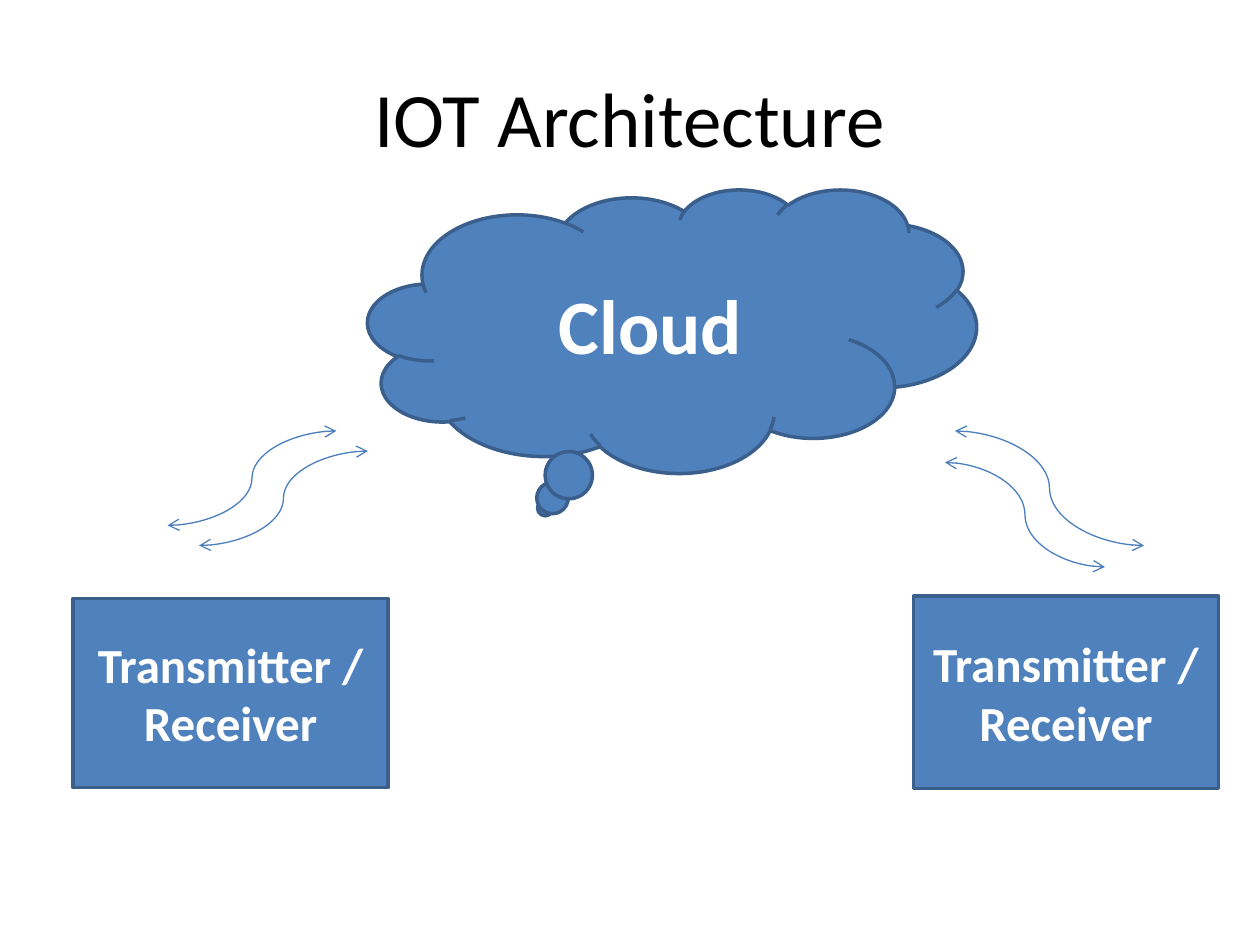
from lxml import etree
from pptx import Presentation
from pptx.dml.color import RGBColor
from pptx.enum.shapes import MSO_CONNECTOR, MSO_SHAPE
from pptx.enum.text import MSO_ANCHOR, PP_ALIGN
from pptx.oxml.ns import qn
from pptx.util import Inches, Pt

CURVE = MSO_CONNECTOR.CURVE
RECTANGLE = MSO_SHAPE.RECTANGLE
CLOUD = MSO_SHAPE.CLOUD_CALLOUT
MIDDLE = MSO_ANCHOR.MIDDLE
CENTER = PP_ALIGN.CENTER

BLACK = RGBColor(0x00, 0x00, 0x00)
WHITE = RGBColor(0xFF, 0xFF, 0xFF)
BLUE = RGBColor(0x4F, 0x81, 0xBD)
OUTLINE_BLUE = RGBColor(0x3A, 0x5F, 0x8C)
SIGNAL_BLUE = RGBColor(0x4B, 0x7E, 0xBC)

DEVICE_LABEL = "Transmitter / Receiver"
SIGNALS = [  # start and end of each curve
    ((1.33, 4.17), (2.67, 3.42)),
    ((1.58, 4.33), (2.92, 3.58)),
    ((7.58, 3.42), (9.08, 4.33)),
    ((7.5, 3.67), (8.77, 4.5)),
]


def place(shape, left, top, width, height):
    shape.left, shape.top = Inches(left), Inches(top)
    shape.width, shape.height = Inches(width), Inches(height)


def write_label(shape, text, size, color, bold=False):
    frame = shape.text_frame
    frame.word_wrap = True
    frame.vertical_anchor = MIDDLE
    para = frame.paragraphs[0]
    para.text = text
    para.alignment = CENTER
    para.font.name = "Calibri"
    para.font.size = Pt(size)
    para.font.bold = bold
    para.font.color.rgb = color


def style_node(shape, text, size):
    shape.fill.solid()
    shape.fill.fore_color.rgb = BLUE
    shape.line.color.rgb = OUTLINE_BLUE
    shape.line.width = Pt(2)
    write_label(shape, text, size, WHITE, bold=True)


def add_node(page, kind, area, text, size):
    node = page.shapes.add_shape(kind, *map(Inches, area))
    node.shadow.inherit = False
    style_node(node, text, size)


def remove_bullet(para):
    properties = para._p.get_or_add_pPr()
    properties.set("marL", "0")
    properties.set("indent", "0")
    etree.SubElement(properties, qn("a:buNone"))


def add_signal(page, start, end):
    """Draw a curve with an open arrowhead at both ends."""
    signal = page.shapes.add_connector(CURVE, *map(Inches, start + end))
    signal.line.color.rgb = SIGNAL_BLUE
    signal.line.width = Pt(0.75)
    line = signal.line._get_or_add_ln()
    for tag in ("a:headEnd", "a:tailEnd"):
        etree.SubElement(line, qn(tag), type="arrow")
    etree.SubElement(signal._element.spPr, qn("a:effectLst"))


def main():
    deck = Presentation()
    deck.slide_width, deck.slide_height = Inches(10), Inches(7.5)
    page = deck.slides.add_slide(deck.slide_layouts[1])
    title, right_device = page.placeholders

    place(title, 0.5, 0.3, 9, 1.25)
    write_label(title, "IOT Architecture", 44, BLACK)

    add_node(page, RECTANGLE, (0.58, 4.75, 2.5, 1.5), DEVICE_LABEL, 28)
    add_node(page, CLOUD, (2.92, 1.5, 4.83, 2.25), "Cloud", 44)

    place(right_device, 7.25, 4.73, 2.42, 1.53)
    style_node(right_device, DEVICE_LABEL, 28)
    remove_bullet(right_device.text_frame.paragraphs[0])

    for start, end in SIGNALS:
        add_signal(page, start, end)

    deck.save("out.pptx")


if __name__ == "__main__":
    main()
